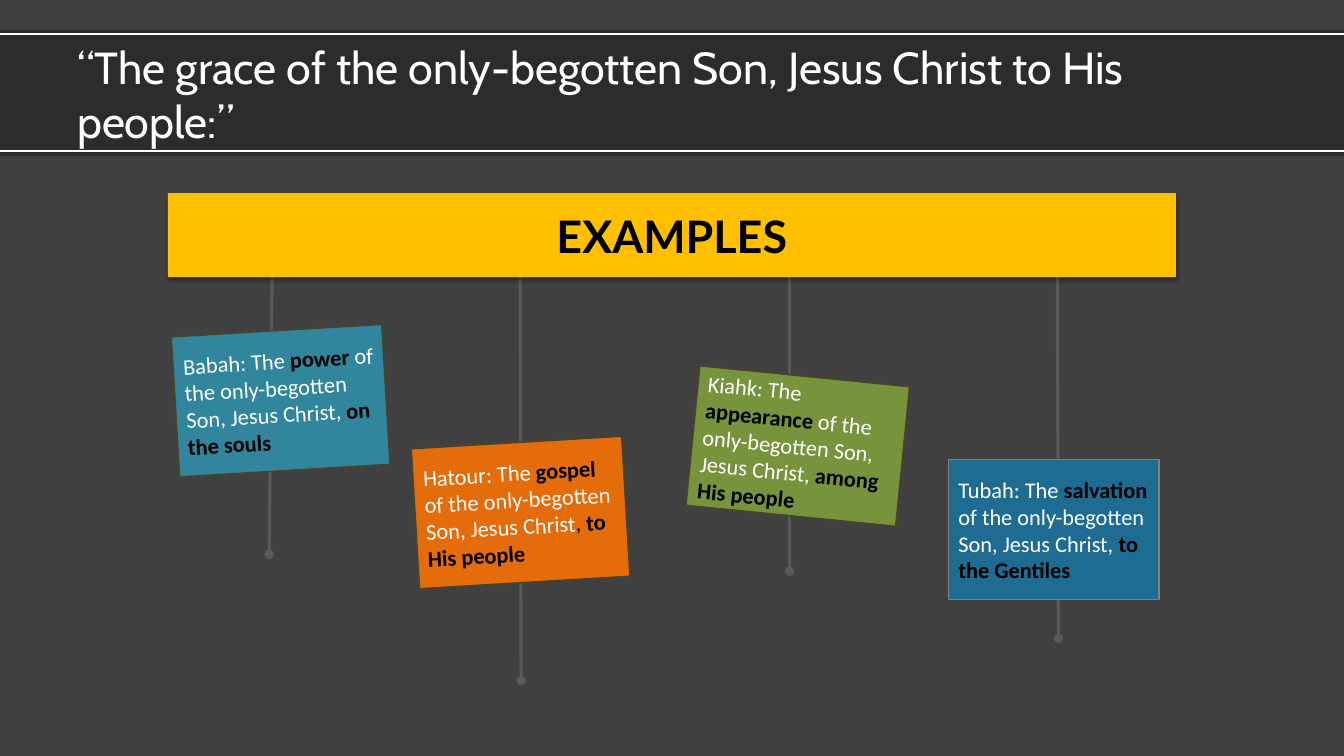
from typing import NamedTuple

from lxml import etree
from pptx import Presentation
from pptx.dml.color import RGBColor
from pptx.enum.shapes import MSO_CONNECTOR, MSO_SHAPE
from pptx.enum.text import MSO_ANCHOR, PP_ALIGN
from pptx.oxml.ns import qn
from pptx.util import Inches, Pt

RECT = MSO_SHAPE.RECTANGLE
STRAIGHT = MSO_CONNECTOR.STRAIGHT
MIDDLE = MSO_ANCHOR.MIDDLE
LEFT, CENTER = PP_ALIGN.LEFT, PP_ALIGN.CENTER
COLS, ROWS = 80, 45
WHITE, BLACK = "FFFFFF", "000000"


class Box(NamedTuple):
    col: float
    row: float
    cols: float
    rows: float


class Span(NamedTuple):
    text: str
    color: str = WHITE
    bold: bool = False


class Cord(NamedTuple):
    top: float
    foot: float
    end: float


class Card(NamedTuple):
    col: float
    row: float
    turn: float
    fill: str
    edge: str
    cord: Cord
    spans: list[Span]


def plain(text: str) -> Span:
    return Span(text)


def strong(text: str) -> Span:
    return Span(text, BLACK, True)


BAND = Box(0, 1.8, COLS, 7.5)
TITLE = Box(4, 1.8, 72, 7.5)
BANNER = Box(10, 11.5, 60, 5)
RULES = (2.04, 9)
CORD_ROW = 16.2
CARD_COLS, CARD_ROWS = 12.54, 8.34
OLIVE = "4A452A"
BODY = " of the only-begotten Son, Jesus Christ"

CARDS = [
    Card(10.44, 19.68, 356.6, "31859C", OLIVE, Cord(16.2, 16.02, 33),
         [plain("Babah: The "), strong("power"), plain(BODY + ", "),
          strong("on the souls")]),
    Card(24.72, 26.34, 356.6, "E46C0A", OLIVE, Cord(30.96, 31.02, 40.5),
         [plain("Hatour: The "), strong("gospel"), plain(BODY),
          Span(", ", BLACK), strong("to His people")]),
    Card(41.22, 22.38, 5.7, "77933C", OLIVE, Cord(47, 47, 34),
         [plain("Kiahk: The "), strong("appearance"), plain(BODY + ", "),
          strong("among His people")]),
    Card(56.46, 27.36, 0, "1E6C92", "808080", Cord(62.94, 63, 38),
         [plain("Tubah: The "), strong("salvation"), plain(BODY + ", "),
          strong("to the Gentiles")]),
]

deck = Presentation()
deck.slide_width, deck.slide_height = Inches(13.33), Inches(7.5)
slide = deck.slides.add_slide(deck.slide_layouts[6])


def tint(code: str) -> RGBColor:
    return RGBColor.from_string(code)


def across(cols: float) -> int:
    return round(deck.slide_width * cols / COLS)


def down(rows: float) -> int:
    return round(deck.slide_height * rows / ROWS)


def place(box: Box) -> tuple[int, int, int, int]:
    return across(box.col), down(box.row), across(box.cols), down(box.rows)


def fade(node, share: int) -> None:
    etree.SubElement(node, qn("a:alpha"), val=str(share * 1000))


def block(box: Box, fill: str, edge: str = ""):
    shape = slide.shapes.add_shape(RECT, *place(box))
    shape.shadow.inherit = False
    shape.fill.solid()
    shape.fill.fore_color.rgb = tint(fill)
    if edge:
        shape.line.color.rgb = tint(edge)
        shape.line.width = Pt(1)
    else:
        shape.line.fill.background()
    return shape


def line(col: float, row: float, end: float, foot: float,
         color: str, width: float, dot: bool = False) -> None:
    link = slide.shapes.add_connector(
        STRAIGHT, across(col), down(row), across(end), down(foot))
    link.line.color.rgb = tint(color)
    link.line.width = Pt(width)
    if dot:
        etree.SubElement(link.line._get_or_add_ln(), qn("a:tailEnd"), type="oval")
    etree.SubElement(link._element.spPr, qn("a:effectLst"))


def write(shape, spans: list[Span], size: float, face: str, align=LEFT) -> None:
    frame = shape.text_frame
    frame.word_wrap = True
    frame.vertical_anchor = MIDDLE
    para = frame.paragraphs[0]
    para.alignment = align
    for span in spans:
        run = para.add_run()
        run.text = span.text
        run.font.size = Pt(size)
        run.font.name = face
        run.font.bold = span.bold
        run.font.color.rgb = tint(span.color)


def shade(shape) -> None:
    glow = etree.SubElement(
        shape._element.spPr.find(qn("a:effectLst")), qn("a:outerShdw"),
        blurRad=str(Pt(3.1)), dist=str(Pt(1.8)), dir="5400000", rotWithShape="0")
    fade(etree.SubElement(glow, qn("a:srgbClr"), val=BLACK), 35)


def hang(card: Card) -> None:
    cord = card.cord
    line(cord.top, CORD_ROW, cord.foot, cord.end, "595959", 2.25, True)
    note = block(Box(card.col, card.row, CARD_COLS, CARD_ROWS), card.fill, card.edge)
    note.rotation = card.turn
    write(note, card.spans, 16, "Calibri")


def main() -> None:
    back = slide.background.fill
    back.solid()
    back.fore_color.rgb = tint("404040")
    band = block(BAND, BLACK)
    fade(band._element.spPr.find(qn("a:solidFill"))[0], 30)
    for row in RULES:
        line(0, row, COLS, row, WHITE, 1.25)
    title = slide.shapes.add_textbox(*place(TITLE))
    write(title, [plain("“The grace of the only-begotten Son, "
                        "Jesus Christ to His people:”")], 32, "Cabin")
    for card in CARDS:
        hang(card)
    banner = block(BANNER, "FFC000")
    shade(banner)
    write(banner, [strong("EXAMPLES")], 32, "Lato", CENTER)
    deck.save("out.pptx")


if __name__ == "__main__":
    main()
